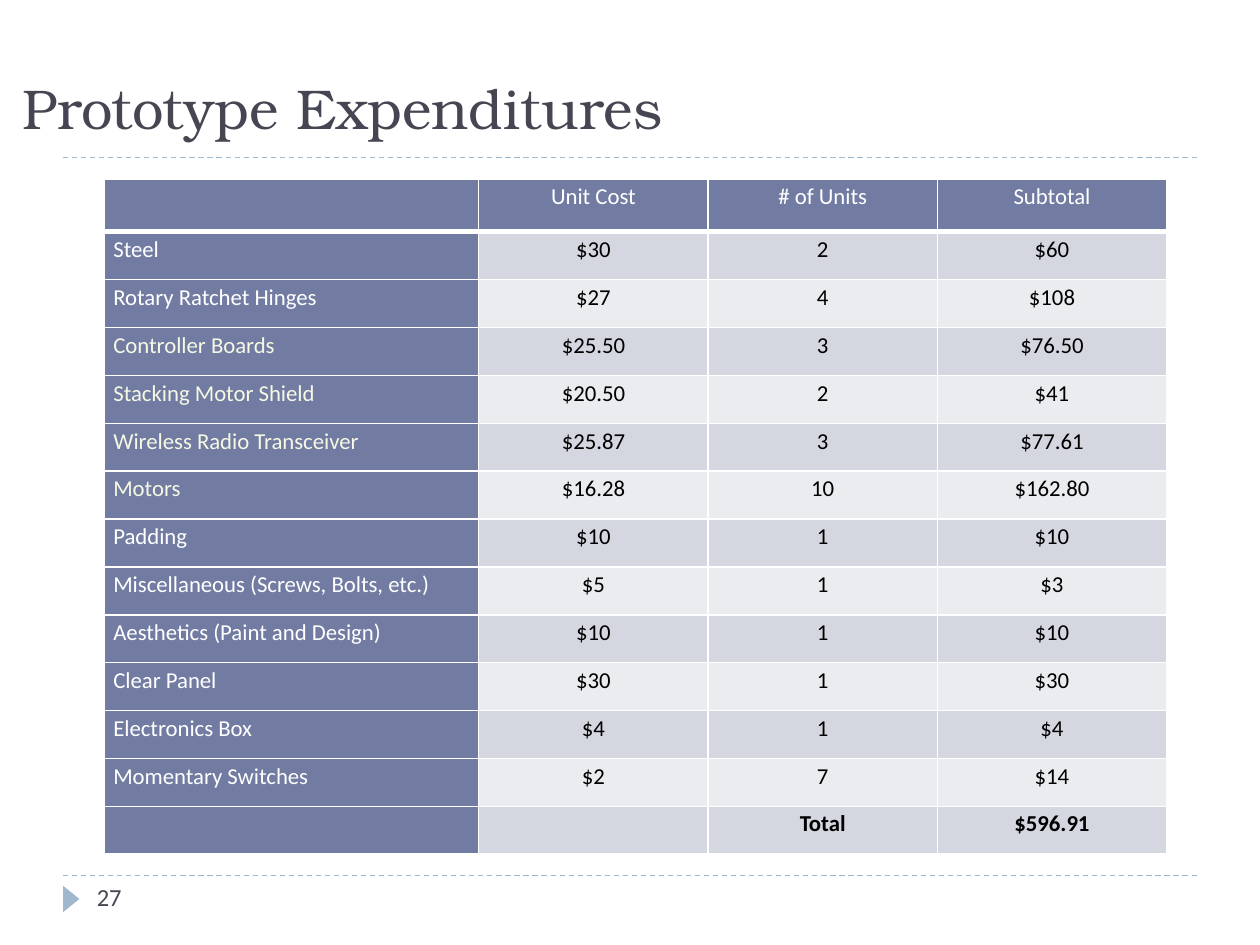
import pptx
import pptx.util
import pptx.dml.color
import pptx.enum.dml
import pptx.enum.shapes
import pptx.enum.text
import pptx.oxml
import pptx.oxml.ns

Inches = pptx.util.Inches
Pt = pptx.util.Pt
ALIGN = pptx.enum.text.PP_ALIGN
ANCHOR = pptx.enum.text.MSO_ANCHOR

TITLE = "Prototype Expenditures"
NUMBER = "27"
HEAD = ("", "Unit Cost", "# of Units", "Subtotal")
ITEMS = [
    ("Steel", "$30", "2", "$60"),
    ("Rotary Ratchet Hinges", "$27", "4", "$108"),
    ("Controller Boards", "$25.50", "3", "$76.50"),
    ("Stacking Motor Shield", "$20.50", "2", "$41"),
    ("Wireless Radio Transceiver", "$25.87", "3", "$77.61"),
    ("Motors", "$16.28", "10", "$162.80"),
    ("Padding", "$10", "1", "$10"),
    ("Miscellaneous (Screws, Bolts, etc.)", "$5", "1", "$3"),
    ("Aesthetics (Paint and Design)", "$10", "1", "$10"),
    ("Clear Panel", "$30", "1", "$30"),
    ("Electronics Box", "$4", "1", "$4"),
    ("Momentary Switches", "$2", "7", "$14"),
]
TOTAL = ("", "", "Total", "$596.91")
ROWS = [HEAD] + ITEMS + [TOTAL]
CREAM_ROWS = range(3, 7)
WIDTHS = (2.97, 1.82, 1.82, 1.82)
HEAD_TALL, ROW_TALL = 0.42, 0.38

INK, ACCENT, SLATE = "464653", "9FB8CD", "727CA3"
WHITE, BLACK, CREAM = "FFFFFF", "000000", "F6F8E4"
BANDS = ("EBECF0", "D5D7E0")


def tint(value):
    return pptx.dml.color.RGBColor.from_string(value)


def write(frame, text, size=13, face="Calibri", color=INK, bold=False,
          align=ALIGN.LEFT, anchor=ANCHOR.TOP, space=1.0):
    frame.word_wrap = True
    frame.vertical_anchor = anchor
    para = frame.paragraphs[0]
    para.alignment = align
    para.line_spacing = space
    run = para.add_run()
    run.text = text
    run.font.size = Pt(size)
    run.font.name = face
    run.font.bold = bold
    run.font.color.rgb = tint(color)


def add_text(slide, box, text, **style):
    shape = slide.shapes.add_textbox(*map(Inches, box))
    write(shape.text_frame, text, **style)


def add_rule(slide, y):
    rule = slide.shapes.add_connector(
        pptx.enum.shapes.MSO_CONNECTOR.STRAIGHT,
        Inches(0.5), Inches(y), Inches(9.5), Inches(y))
    rule.line.color.rgb = tint(ACCENT)
    rule.line.width = Pt(0.75)
    rule.line.dash_style = pptx.enum.dml.MSO_LINE.DASH
    props = rule.element.find(pptx.oxml.ns.qn("p:spPr"))
    props.append(pptx.oxml.parse_xml(
        f'<a:effectLst {pptx.oxml.ns.nsdecls("a")}/>'))


def add_marker(slide):
    mark = slide.shapes.add_shape(
        pptx.enum.shapes.MSO_SHAPE.ISOSCELES_TRIANGLE,
        Inches(0.46), Inches(7.07), Inches(0.21), Inches(0.13))
    mark.rotation = 90
    mark.shadow.inherit = False
    mark.fill.solid()
    mark.fill.fore_color.rgb = tint(ACCENT)
    mark.line.fill.background()


def add_edges(cell, low):
    props = cell._tc.get_or_add_tcPr()
    for side, width in (("L", 1), ("R", 1), ("T", 1), ("B", low)):
        props.append(pptx.oxml.parse_xml(
            f'<a:ln{side} {pptx.oxml.ns.nsdecls("a")} w="{Pt(width)}">'
            f'<a:solidFill><a:srgbClr val="{WHITE}"/></a:solidFill>'
            f'</a:ln{side}>'))


def fill_cell(cell, text, row, col):
    dark = row == 0 or col == 0
    cell.margin_left = cell.margin_right = Inches(0.07)
    cell.margin_top = cell.margin_bottom = 0
    add_edges(cell, 3 if row == 0 else 1)
    cell.fill.solid()
    cell.fill.fore_color.rgb = tint(SLATE if dark else BANDS[row % 2])
    if text:
        color = WHITE if dark else BLACK
        if col == 0 and row in CREAM_ROWS:
            color = CREAM
        write(cell.text_frame, text, color=color, space=1.15,
              bold=row == len(ROWS) - 1,
              align=ALIGN.CENTER if col else ALIGN.LEFT)


def add_costs(slide):
    talls = [HEAD_TALL] + [ROW_TALL] * (len(ROWS) - 1)
    table = slide.shapes.add_table(
        len(ROWS), len(HEAD), Inches(0.83), Inches(1.42),
        Inches(sum(WIDTHS)), Inches(sum(talls))).table
    for col, width in enumerate(WIDTHS):
        table.columns[col].width = Inches(width)
    for row, (tall, texts) in enumerate(zip(talls, ROWS)):
        table.rows[row].height = Inches(tall)
        for col, text in enumerate(texts):
            fill_cell(table.cell(row, col), text, row, col)


def main():
    deck = pptx.Presentation()
    deck.slide_width, deck.slide_height = Inches(10), Inches(7.5)
    slide = deck.slides.add_slide(deck.slide_layouts[6])
    for y in (6.95, 1.25):
        add_rule(slide, y)
    add_marker(slide)
    add_text(slide, (0.08, 0.3, 9, 0.87), TITLE, size=32,
             face="TeX Gyre Bonum", anchor=ANCHOR.BOTTOM)
    add_text(slide, (0.67, 6.95, 2.17, 0.4), NUMBER, size=14)
    add_costs(slide)
    deck.save("out.pptx")


if __name__ == "__main__":
    main()
